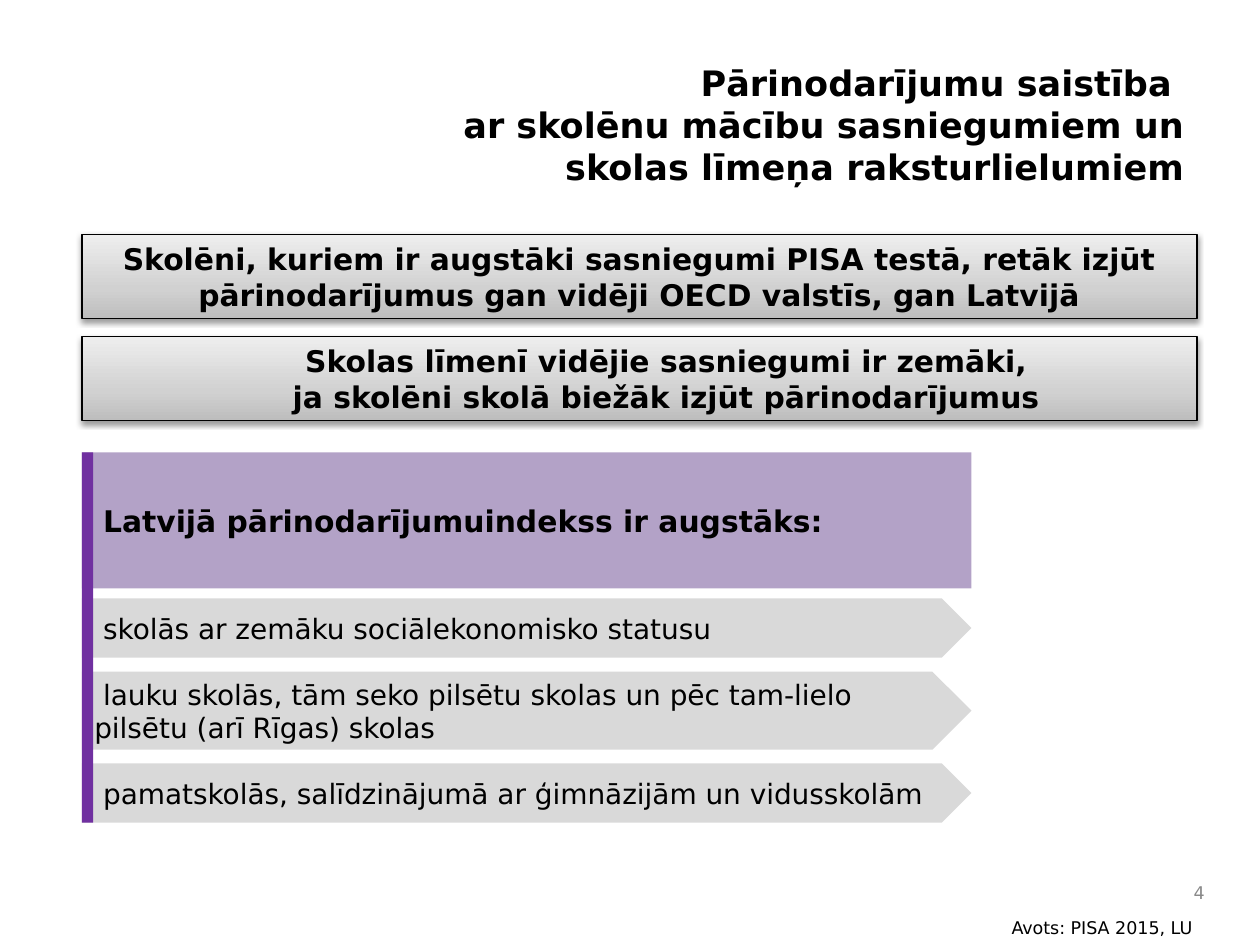
from dataclasses import dataclass

from lxml.etree import SubElement
from pptx import Presentation
from pptx.dml.color import RGBColor
from pptx.enum.shapes import MSO_SHAPE as Shape
from pptx.enum.text import MSO_ANCHOR as Anchor, PP_ALIGN as Align
from pptx.oxml.ns import qn
from pptx.util import Inches, Pt


@dataclass(frozen=True)
class Theme:
    font: str = "DejaVu Sans"
    text: str = "000000"
    muted: str = "898989"
    arrow: str = "D9D9D9"
    heading: str = "B3A2C7"
    accent: str = "7030A0"
    gradient: tuple = ((0, "BDBDBD"), (35, "D1D1D1"), (100, "EEEEEE"))
    title_size: int = 20
    strong_size: int = 17
    body_size: int = 16
    small_size: int = 10


THEME = Theme()

TITLE = "Pārinodarījumu saistība \var skolēnu mācību sasniegumiem un skolas līmeņa raksturlielumiem"
FINDINGS = [  # text, left indent
    ("Skolēni, kuriem ir augstāki sasniegumi PISA testā, retāk izjūt "
     "pārinodarījumus gan vidēji OECD valstīs, gan Latvijā", 0),
    ("Skolas līmenī vidējie sasniegumi ir zemāki, \n"
     "ja skolēni skolā biežāk izjūt pārinodarījumus ", 0.51),
]
HEADING = "Latvijā pārinodarījumuindekss ir augstāks:"
SCHOOLS = [  # text, arrow height
    ("skolās ar zemāku sociālekonomisko statusu", 0.47),
    ("lauku skolās, tām seko pilsētu skolas un pēc tam-lielo pilsētu (arī Rīgas) skolas", 0.62),
    ("pamatskolās, salīdzinājumā ar ģimnāzijām un vidusskolām", 0.47),
]
SOURCE = "Avots: PISA 2015, LU"
PAGE_NUMBER = "4"

LEFT, RIGHT = 0.65, 9.5
FINDING_TOP, FINDING_HEIGHT, FINDING_PITCH = 1.86, 0.67, 0.81
LIST_TOP, LIST_WIDTH, HEADING_HEIGHT = 3.59, 7.06, 1.08
ARROW_TOP, ARROW_GAP = 4.75, 0.11
FIRST_LINE_INDENT = 0.07


def write(shape, text, size, bold=False, color=THEME.text, align=Align.LEFT,
          margin=0, first_line=0):
    frame = shape.text_frame
    frame.text = text
    frame.word_wrap = True
    for paragraph in frame.paragraphs:
        paragraph.alignment = align
        properties = paragraph._p.get_or_add_pPr()
        properties.set("marL", str(Inches(margin)))
        properties.set("indent", str(Inches(first_line)))
        for run in paragraph.runs:
            font = run.font
            font.name, font.size, font.bold = THEME.font, Pt(size), bold
            font.color.rgb = RGBColor.from_string(color)


def add_block(slide, kind, left, top, width, height, color):
    shape = slide.shapes.add_shape(kind, *map(Inches, (left, top, width, height)))
    shape.shadow.inherit = False
    shape.line.fill.background()
    shape.fill.solid()
    shape.fill.fore_color.rgb = RGBColor.from_string(color)
    return shape


def raise_panel(shape):
    """Give a block an upward grey gradient, a thin outline and a soft shadow below."""
    shape.fill.gradient()
    shape.fill.gradient_angle = 90
    properties = shape._element.spPr
    stops = properties.find(".//" + qn("a:gsLst"))
    stops.clear()
    for position, color in THEME.gradient:
        stop = SubElement(stops, qn("a:gs"), pos=str(position * 1000))
        SubElement(stop, qn("a:srgbClr"), val=color)
    shape.line.color.rgb = RGBColor.from_string(THEME.text)
    shape.line.width = Pt(0.75)
    shadow = SubElement(properties.find(qn("a:effectLst")), qn("a:outerShdw"),
                        blurRad=str(Pt(3.1)), dist=str(Pt(1.6)),
                        dir=str(90 * 60000), rotWithShape="0")
    color = SubElement(shadow, qn("a:srgbClr"), val=THEME.text)
    SubElement(color, qn("a:alpha"), val="38000")


def add_title(slide):
    title = slide.shapes.title
    title.left, title.top, title.width, title.height = map(Inches, (2.83, 0.42, 6.67, 1.13))
    write(title, TITLE, THEME.title_size, bold=True, align=Align.RIGHT)


def add_footer(slide):
    number = slide.shapes.add_textbox(*map(Inches, (9.33, 6.92, 0.33, 0.33)))
    number.text_frame.vertical_anchor = Anchor.MIDDLE
    write(number, PAGE_NUMBER, THEME.small_size, color=THEME.muted, align=Align.RIGHT)
    source = slide.shapes.add_textbox(*map(Inches, (7.93, 7.23, 1.73, 0.27)))
    write(source, SOURCE, THEME.small_size)
    source.text_frame.word_wrap = False


def add_school_list(slide):
    top = ARROW_TOP
    for text, height in SCHOOLS:
        arrow = add_block(slide, Shape.PENTAGON, LEFT, top, LIST_WIDTH, height, THEME.arrow)
        write(arrow, text, THEME.body_size, first_line=FIRST_LINE_INDENT)
        top += height + ARROW_GAP
    heading = add_block(slide, Shape.RECTANGLE, LEFT, LIST_TOP, LIST_WIDTH,
                        HEADING_HEIGHT, THEME.heading)
    write(heading, HEADING, THEME.strong_size, bold=True, first_line=FIRST_LINE_INDENT)
    add_block(slide, Shape.RECTANGLE, LEFT, LIST_TOP, 0.09,
              top - ARROW_GAP - LIST_TOP, THEME.accent)


def add_findings(slide):
    for row, (text, margin) in enumerate(FINDINGS):
        panel = add_block(slide, Shape.RECTANGLE, LEFT, FINDING_TOP + row * FINDING_PITCH,
                          RIGHT - LEFT, FINDING_HEIGHT, THEME.arrow)
        raise_panel(panel)
        write(panel, text, THEME.strong_size, bold=True, align=Align.CENTER, margin=margin)


def main():
    presentation = Presentation()
    presentation.slide_width, presentation.slide_height = Inches(10), Inches(7.5)
    slide = presentation.slides.add_slide(presentation.slide_layouts[5])
    add_title(slide)
    add_footer(slide)
    add_school_list(slide)
    add_findings(slide)
    presentation.save("out.pptx")


if __name__ == "__main__":
    main()
